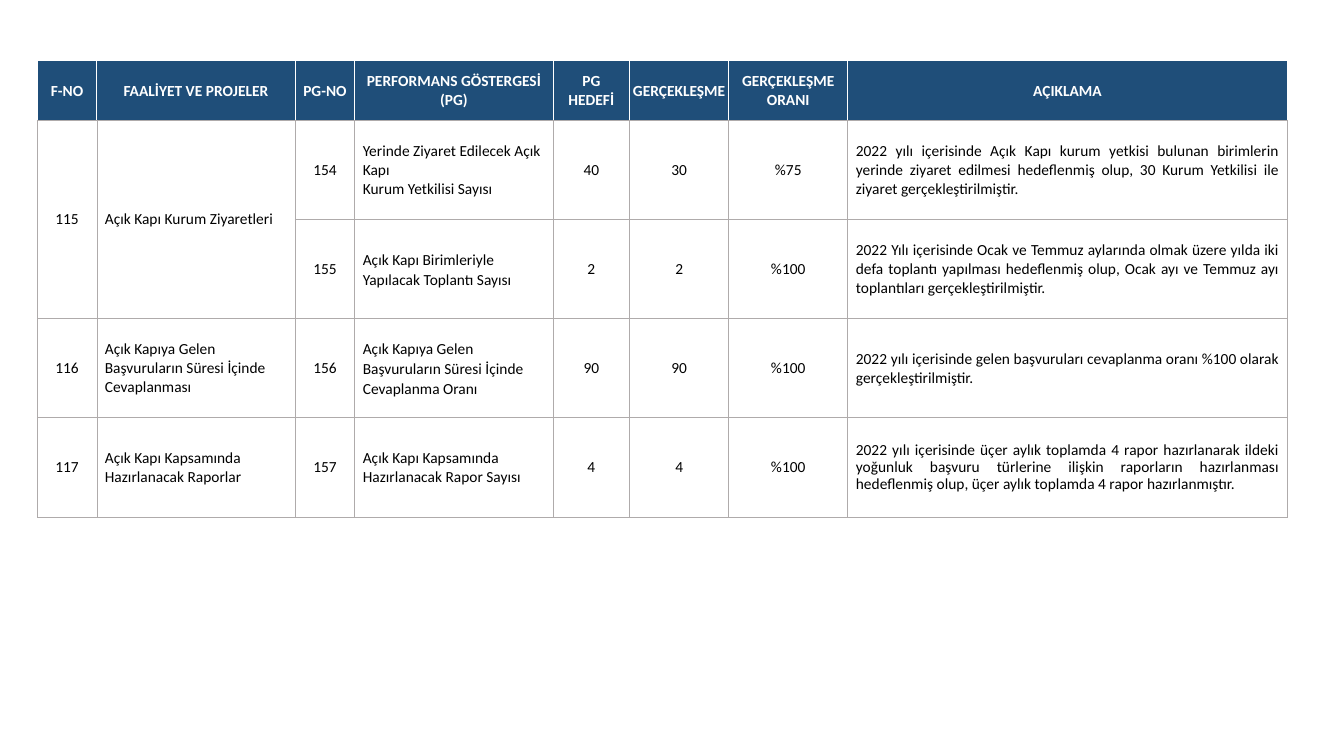
from dataclasses import dataclass

from lxml import etree
from pptx import Presentation
from pptx.dml.color import RGBColor
from pptx.enum.text import MSO_ANCHOR, PP_ALIGN
from pptx.oxml.ns import qn
from pptx.util import Inches, Pt

LEFT, CENTER, JUSTIFY = PP_ALIGN.LEFT, PP_ALIGN.CENTER, PP_ALIGN.JUSTIFY
MIDDLE = MSO_ANCHOR.MIDDLE


@dataclass(frozen=True)
class Theme:
    font: str = "Calibri"
    size: float = 11
    navy: str = "1F4E79"
    white: str = "FFFFFF"
    black: str = "000000"
    grid: str = "AFABAB"
    hairline: float = 0.25
    thin: float = 0.5
    header_line: float = 1


THEME = Theme()

HEADERS = ["F-NO", "FAALİYET VE PROJELER", "PG-NO", "PERFORMANS GÖSTERGESİ (PG)",
           "PG\vHEDEFİ", "GERÇEKLEŞME", "GERÇEKLEŞME ORANI", "AÇIKLAMA"]
ROWS = [
    ["115", "Açık Kapı Kurum Ziyaretleri", "154",
     "Yerinde Ziyaret Edilecek Açık Kapı\nKurum Yetkilisi Sayısı", "40", "30", "%75",
     "2022 yılı içerisinde Açık Kapı kurum yetkisi bulunan birimlerin yerinde ziyaret "
     "edilmesi hedeflenmiş olup, 30 Kurum Yetkilisi ile ziyaret gerçekleştirilmiştir."],
    ["", "", "155", "Açık Kapı Birimleriyle Yapılacak Toplantı Sayısı", "2", "2", "%100",
     "2022 Yılı içerisinde Ocak ve Temmuz aylarında olmak üzere yılda iki defa toplantı "
     "yapılması hedeflenmiş olup, Ocak ayı ve Temmuz ayı toplantıları gerçekleştirilmiştir."],
    ["116", "Açık Kapıya Gelen Başvuruların Süresi İçinde Cevaplanması", "156",
     "Açık Kapıya Gelen Başvuruların Süresi İçinde Cevaplanma Oranı", "90", "90", "%100",
     "2022 yılı içerisinde gelen başvuruları cevaplanma oranı %100 olarak "
     "gerçekleştirilmiştir."],
    ["117", "Açık Kapı Kapsamında Hazırlanacak Raporlar", "157",
     "Açık Kapı Kapsamında Hazırlanacak Rapor Sayısı", "4", "4", "%100",
     "2022 yılı içerisinde üçer aylık toplamda 4 rapor hazırlanarak ildeki yoğunluk "
     "başvuru türlerine ilişkin raporların hazırlanması hedeflenmiş olup, üçer aylık "
     "toplamda 4 rapor hazırlanmıştır."],
]
LINE_SPACING = {(2, 3): 1.07, (3, 3): 1.07, (4, 7): 0.9}
ALIGNMENTS = [CENTER, LEFT, CENTER, LEFT, CENTER, CENTER, CENTER, JUSTIFY]
MERGED_COLUMNS = (0, 1)

SLIDE_W, SLIDE_H = 13.33, 7.5
TABLE_X, TABLE_Y, TABLE_W = 0.37, 0.6, 12.4
COL_UNITS = [3, 10, 3, 10, 3.85, 5, 6, 22.15]
ROW_UNITS = [3] + [5] * len(ROWS)
UNIT = TABLE_W / sum(COL_UNITS)


def set_borders(cell, sides):
    tc_pr = cell._tc.get_or_add_tcPr()
    for i, (side, (color, width)) in enumerate(sides.items()):
        ln = etree.Element(qn(f"a:ln{side}"), w=str(Pt(width)))
        fill = etree.SubElement(ln, qn("a:solidFill"))
        etree.SubElement(fill, qn("a:srgbClr"), val=color)
        tc_pr.insert(i, ln)


def style_cell(cell, row, col):
    header = row == 0
    narrow = header or col == 0
    cell.vertical_anchor = MIDDLE
    cell.margin_left = cell.margin_right = Inches(0.01 if narrow else 0.08)
    cell.margin_top, cell.margin_bottom = Inches(0.01), 0
    if header:
        cell.fill.solid()
        cell.fill.fore_color.rgb = RGBColor.from_string(THEME.navy)
    else:
        cell.fill.background()
    for p in cell.text_frame.paragraphs:
        p.alignment = CENTER if header else ALIGNMENTS[col]
        if (row, col) in LINE_SPACING:
            p.line_spacing = LINE_SPACING[row, col]
        for r in p.runs:
            r.font.name, r.font.size, r.font.bold = THEME.font, Pt(THEME.size), header
            r.font.color.rgb = RGBColor.from_string(THEME.white if header else THEME.black)

    hairline = (THEME.grid, THEME.hairline)
    thin = (THEME.grid, THEME.thin)
    white = (THEME.white, THEME.header_line)
    last = len(COL_UNITS) - 1
    set_borders(cell, {
        "L": white if header else hairline if col == 0 else thin,
        "R": white if header else hairline if col == last else thin,
        "T": white if header else hairline,
        "B": hairline,
    })


def main():
    prs = Presentation()
    prs.slide_width, prs.slide_height = Inches(SLIDE_W), Inches(SLIDE_H)
    s = prs.slides.add_slide(prs.slide_layouts[6])
    data = [HEADERS] + ROWS
    frame = s.shapes.add_table(len(data), len(HEADERS), Inches(TABLE_X), Inches(TABLE_Y),
                               Inches(TABLE_W), Inches(UNIT * sum(ROW_UNITS)))
    table = frame.table
    table.horz_banding = False
    for column, units in zip(table.columns, COL_UNITS):
        column.width = Inches(units * UNIT)
    for line, units in zip(table.rows, ROW_UNITS):
        line.height = Inches(units * UNIT)
    for row, values in enumerate(data):
        for col, value in enumerate(values):
            cell = table.cell(row, col)
            cell.text_frame.text = value
            style_cell(cell, row, col)
    for col in MERGED_COLUMNS:
        table.cell(1, col).merge(table.cell(2, col))
    prs.save("out.pptx")


if __name__ == "__main__":
    main()
